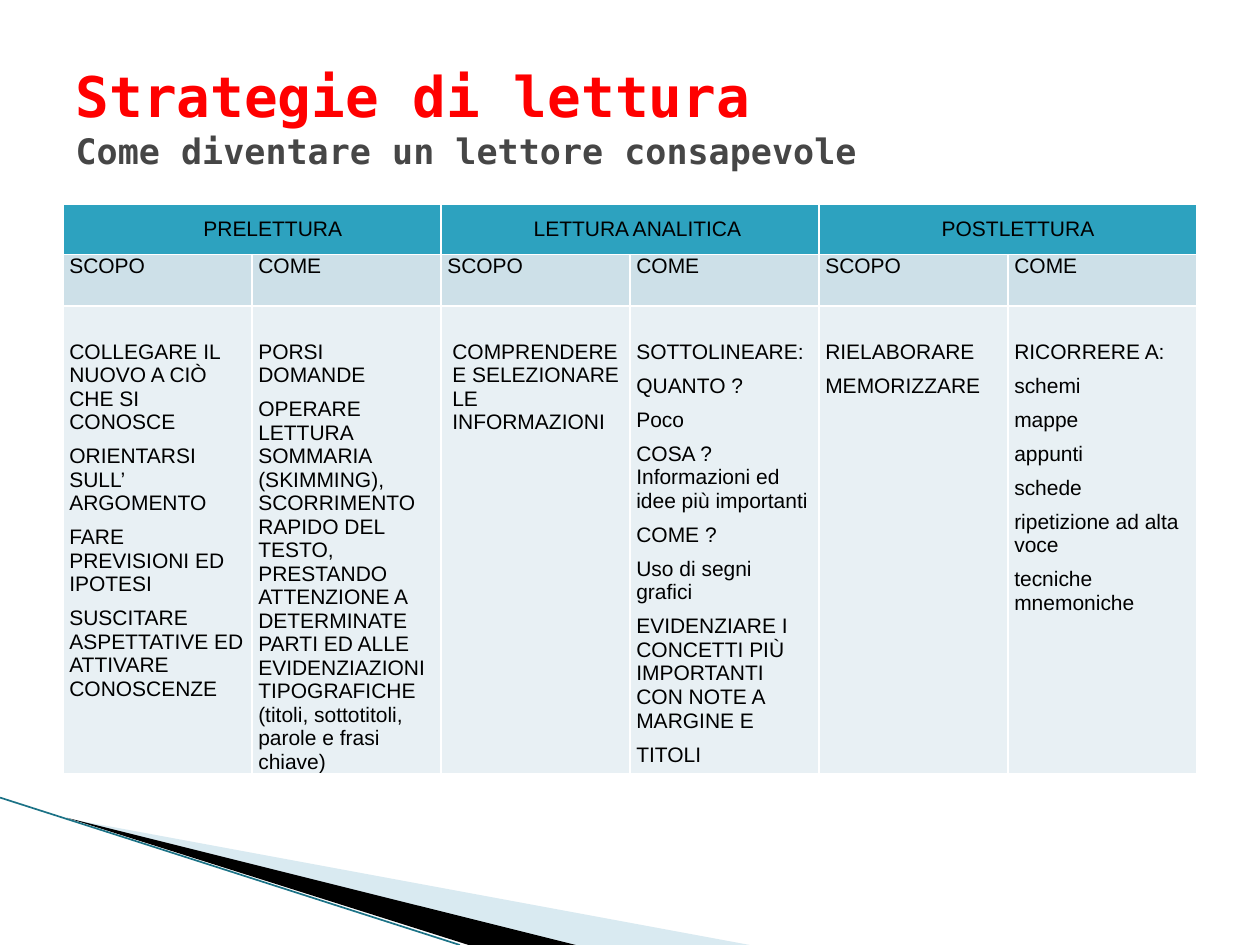
from typing import NamedTuple

from lxml.etree import SubElement as Sub
from pptx import Presentation
from pptx.dml.color import RGBColor as RGB
from pptx.enum.shapes import MSO_CONNECTOR as Link
from pptx.enum.text import MSO_ANCHOR as Anchor, PP_ALIGN as Align
from pptx.oxml.ns import qn
from pptx.slide import Slide
from pptx.table import Table, _Cell as Cell
from pptx.util import Inches, Pt

WHITE = RGB(0xFF, 0xFF, 0xFF)
BLACK = RGB(0, 0, 0)
RED = RGB(0xFF, 0, 0)
GREY = RGB(0x46, 0x46, 0x46)
TEAL = RGB(0x2D, 0xA2, 0xBF)
PALE = RGB(0xCD, 0xE0, 0xE8)
MIST = RGB(0xE8, 0xF0, 0xF4)
SKY = RGB(0xA0, 0xCB, 0xDC)
DEEP = RGB(0x1B, 0x72, 0x86)


class Wedge(NamedTuple):
    points: list[tuple[float, float]]
    color: RGB
    alpha: int = 100


class Step(NamedTuple):
    name: str
    shift: float
    aims: list[str]
    means: list[str]
    inset: float = 0.05


WEDGES = [
    Wedge([(0.55, 6.5), (5.95, 7.5), (4.56, 7.5)], SKY, 40),
    Wedge([(0.53, 6.49), (4.57, 7.5), (3.72, 7.5)], BLACK),
]

STEPS = [
    Step(
        "PRELETTURA", 0.33,
        ["COLLEGARE IL NUOVO A CIÒ CHE SI CONOSCE",
         "ORIENTARSI SULL’ ARGOMENTO",
         "FARE PREVISIONI ED IPOTESI",
         "SUSCITARE ASPETTATIVE ED ATTIVARE CONOSCENZE"],
        ["PORSI DOMANDE",
         "OPERARE LETTURA SOMMARIA (SKIMMING), SCORRIMENTO RAPIDO DEL TESTO, "
         "PRESTANDO ATTENZIONE A DETERMINATE PARTI ED ALLE EVIDENZIAZIONI "
         "TIPOGRAFICHE (titoli, sottotitoli, parole e frasi chiave)"],
    ),
    Step(
        "LETTURA ANALITICA", 0.12,
        ["COMPRENDERE E SELEZIONARE LE INFORMAZIONI"],
        ["SOTTOLINEARE:", "QUANTO ?", "Poco",
         "COSA ? Informazioni ed idee più importanti",
         "COME ?", "Uso di segni grafici",
         "EVIDENZIARE I CONCETTI PIÙ IMPORTANTI CON NOTE A MARGINE E",
         "TITOLI"],
        0.09,
    ),
    Step(
        "POSTLETTURA", 0.16,
        ["RIELABORARE", "MEMORIZZARE"],
        ["RICORRERE A:", "schemi", "mappe", "appunti", "schede",
         "ripetizione ad alta voce", "tecniche mnemoniche"],
    ),
]


def draw_wedge(slide: Slide, wedge: Wedge) -> None:
    first, *rest = [(Inches(x), Inches(y)) for x, y in wedge.points]
    pen = slide.shapes.build_freeform(*first)
    pen.add_line_segments(rest)
    shape = pen.convert_to_shape()
    shape.shadow.inherit = False
    shape.line.fill.background()
    shape.fill.solid()
    shape.fill.fore_color.rgb = wedge.color
    if wedge.alpha < 100:
        tint = shape.fill._xPr.find(qn("a:solidFill"))[0]
        Sub(tint, qn("a:alpha"), val=str(wedge.alpha * 1000))


def draw_edge(slide: Slide) -> None:
    edge = slide.shapes.add_connector(
        Link.STRAIGHT, Inches(0), Inches(6.33), Inches(3.65), Inches(7.5))
    edge.line.color.rgb = DEEP
    edge.line.width = Pt(0.95)
    Sub(edge._element.spPr, qn("a:effectLst"))


def set_rim(cell: Cell, color: RGB) -> None:
    props = cell._tc.get_or_add_tcPr()
    for spot, side in enumerate(("lnL", "lnR", "lnT", "lnB")):
        line = Sub(props, qn(f"a:{side}"), w=str(Pt(1)))
        fill = Sub(line, qn("a:solidFill"))
        Sub(fill, qn("a:srgbClr"), val=str(color))
        props.insert(spot, line)


def fill_cell(cell: Cell, lines: list[str], color: RGB,
              left: float = 0.05, top: float = 0) -> None:
    cell.fill.solid()
    cell.fill.fore_color.rgb = color
    set_rim(cell, WHITE)
    cell.margin_left, cell.margin_right = Inches(left), Inches(0.05)
    cell.margin_top, cell.margin_bottom = Inches(top), Inches(0)
    frame = cell.text_frame
    frame.text = "\n".join(lines)
    for rank, para in enumerate(frame.paragraphs):
        para.space_before = Pt(3 if rank else 0)
        para.space_after = Pt(3)
        para.font.name = "Arial"
        para.font.size = Pt(12)
        para.font.color.rgb = BLACK


def fill_step(table: Table, col: int, step: Step) -> None:
    head = table.cell(0, col)
    head.merge(table.cell(0, col + 1))
    fill_cell(head, [step.name], TEAL, 0.05 + step.shift)
    set_rim(table.cell(0, col + 1), WHITE)
    head.vertical_anchor = Anchor.MIDDLE
    para = head.text_frame.paragraphs[0]
    para.alignment = Align.CENTER
    para.space_after = Pt(0)
    fill_cell(table.cell(1, col), ["SCOPO"], PALE)
    fill_cell(table.cell(1, col + 1), ["COME"], PALE)
    fill_cell(table.cell(2, col), step.aims, MIST, step.inset, 0.27)
    fill_cell(table.cell(2, col + 1), step.means, MIST, top=0.27)


def draw_table(slide: Slide) -> None:
    table = slide.shapes.add_table(
        3, 2 * len(STEPS), Inches(0.5), Inches(1.62),
        Inches(9), Inches(4.51)).table
    table.first_row = table.horz_banding = False
    for row, high in zip(table.rows, (0.4, 0.41, 3.7)):
        row.height = Inches(high)
    for rank, step in enumerate(STEPS):
        fill_step(table, 2 * rank, step)


def set_title(slide: Slide) -> None:
    title = slide.shapes.title
    title.left, title.top = Inches(0.5), Inches(0.3)
    title.width, title.height = Inches(9), Inches(1.25)
    frame = title.text_frame
    frame.vertical_anchor = Anchor.MIDDLE
    para = frame.paragraphs[0]
    para.alignment = Align.LEFT
    para.font.name = "DejaVu Sans Mono"
    para.font.bold = True
    main = para.add_run()
    main.text = "Strategie di lettura"
    main.font.size = Pt(32)
    main.font.color.rgb = RED
    para.add_line_break()
    sub = para.add_run()
    sub.text = "Come diventare un lettore consapevole"
    sub.font.size = Pt(20)
    sub.font.color.rgb = GREY


def main() -> None:
    deck = Presentation()
    deck.slide_width, deck.slide_height = Inches(10), Inches(7.5)
    slide = deck.slides.add_slide(deck.slide_layouts[5])
    for wedge in WEDGES:
        draw_wedge(slide, wedge)
    draw_edge(slide)
    draw_table(slide)
    set_title(slide)
    deck.save("out.pptx")


if __name__ == "__main__":
    main()
